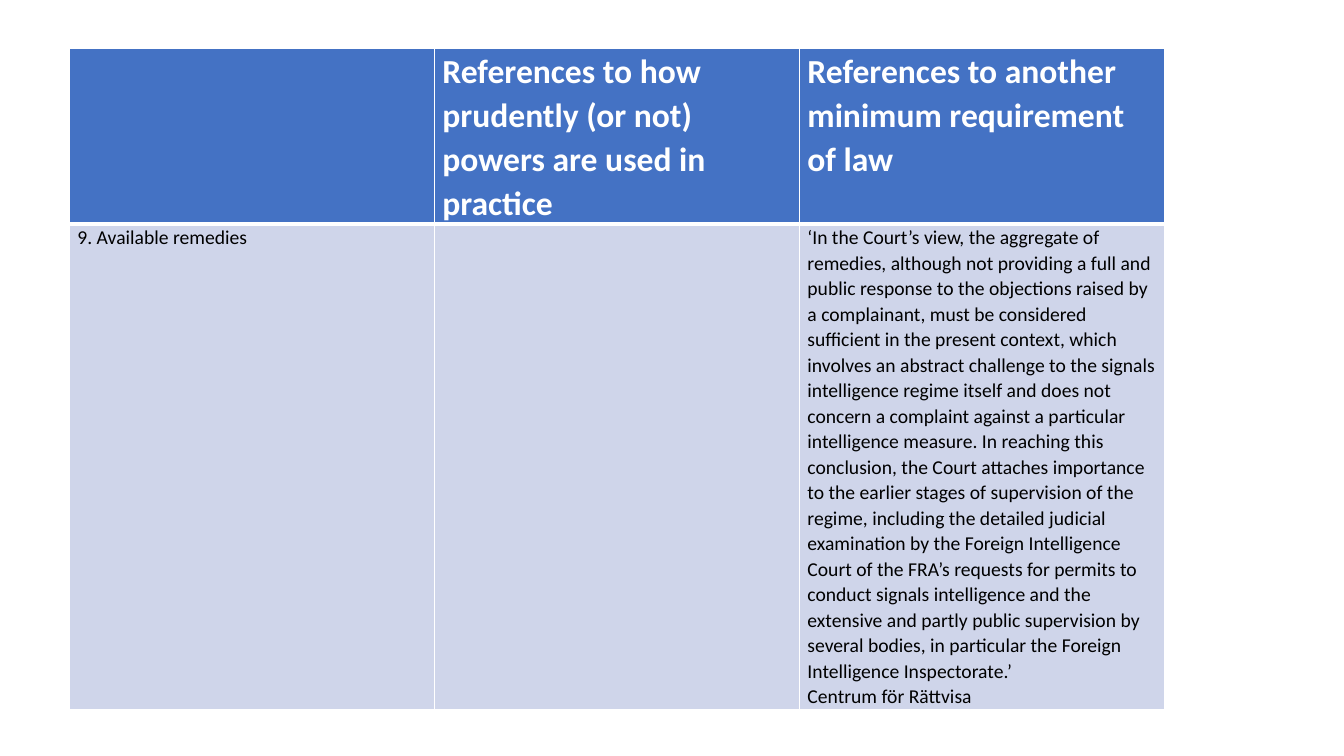
from dataclasses import dataclass

from lxml import etree
from pptx import Presentation
from pptx import util as u
from pptx.dml.color import RGBColor
from pptx.enum import text
from pptx.oxml.ns import qn
from pptx.table import _Cell

COLOURS = {"header": "4472C4", "body": "CFD5EA", "white": "FFFFFF", "black": "000000"}
FONT = "Calibri"
COLUMN_WIDTH = u.Cm(9.2)
SIDES = ("L", "R", "T", "B")


@dataclass(frozen=True)
class TableRow:
    height: float
    fill: str
    colour: str
    size: int
    bold: bool
    borders: tuple[int, int, int, int]
    cells: tuple[str, ...]


ROWS = (
    TableRow(4.4, "header", "white", 24, True, (1, 1, 1, 3), (
        "",
        "References to how prudently (or not) powers are used in practice",
        "References to another minimum requirement of law",
    )),
    TableRow(12.15, "body", "black", 14, False, (1, 1, 3, 1), (
        "9. Available remedies",
        "",
        "‘In the Court’s view, the aggregate of remedies, although not providing a full "
        "and public response to the objections raised by a complainant, must be "
        "considered sufficient in the present context, which involves an abstract "
        "challenge to the signals intelligence regime itself and does not concern a "
        "complaint against a particular intelligence measure. In reaching this "
        "conclusion, the Court attaches importance to the earlier stages of supervision "
        "of the regime, including the detailed judicial examination by the Foreign "
        "Intelligence Court of the FRA’s requests for permits to conduct signals "
        "intelligence and the extensive and partly public supervision by several bodies, "
        "in particular the Foreign Intelligence Inspectorate.’\n"
        "Centrum för Rättvisa",
    )),
)


def write_text(cell: _Cell, content: str, *, size: int, bold: bool, colour: str) -> None:
    cell.text = content
    for paragraph in cell.text_frame.paragraphs:
        paragraph.alignment = text.PP_ALIGN.LEFT
        paragraph.line_spacing = 1.07
        paragraph.font.name = FONT
        paragraph.font.size = u.Pt(size)
        paragraph.font.bold = bold
        paragraph.font.color.rgb = RGBColor.from_string(COLOURS[colour])


def draw_borders(cell: _Cell, widths: tuple[int, int, int, int]) -> None:
    """Draw white borders, with widths in points in the order of SIDES."""
    properties = cell._tc.get_or_add_tcPr()
    for index, (side, width) in enumerate(zip(SIDES, widths)):
        line = etree.Element(qn(f"a:ln{side}"), w=str(u.Pt(width)))
        fill = etree.SubElement(line, qn("a:solidFill"))
        etree.SubElement(fill, qn("a:srgbClr"), val=COLOURS["white"])
        properties.insert(index, line)


def format_cell(cell: _Cell, row: TableRow, content: str) -> None:
    cell.margin_left = cell.margin_right = u.Cm(0.19)
    cell.margin_top = cell.margin_bottom = 0
    cell.vertical_anchor = text.MSO_ANCHOR.TOP
    cell.fill.solid()
    cell.fill.fore_color.rgb = RGBColor.from_string(COLOURS[row.fill])
    draw_borders(cell, row.borders)
    write_text(cell, content, size=row.size, bold=row.bold, colour=row.colour)


def main() -> None:
    presentation = Presentation()
    presentation.slide_width = u.Cm(33.87)
    presentation.slide_height = u.Cm(19.05)
    slide = presentation.slides.add_slide(presentation.slide_layouts[6])

    column_count = len(ROWS[0].cells)
    table = slide.shapes.add_table(
        len(ROWS), column_count, u.Cm(1.76), u.Cm(1.23),
        COLUMN_WIDTH * column_count, u.Cm(sum(row.height for row in ROWS)),
    ).table
    for column in table.columns:
        column.width = COLUMN_WIDTH
    for row_index, row in enumerate(ROWS):
        table.rows[row_index].height = u.Cm(row.height)
        for column_index, content in enumerate(row.cells):
            format_cell(table.cell(row_index, column_index), row, content)

    presentation.save("out.pptx")


if __name__ == "__main__":
    main()
